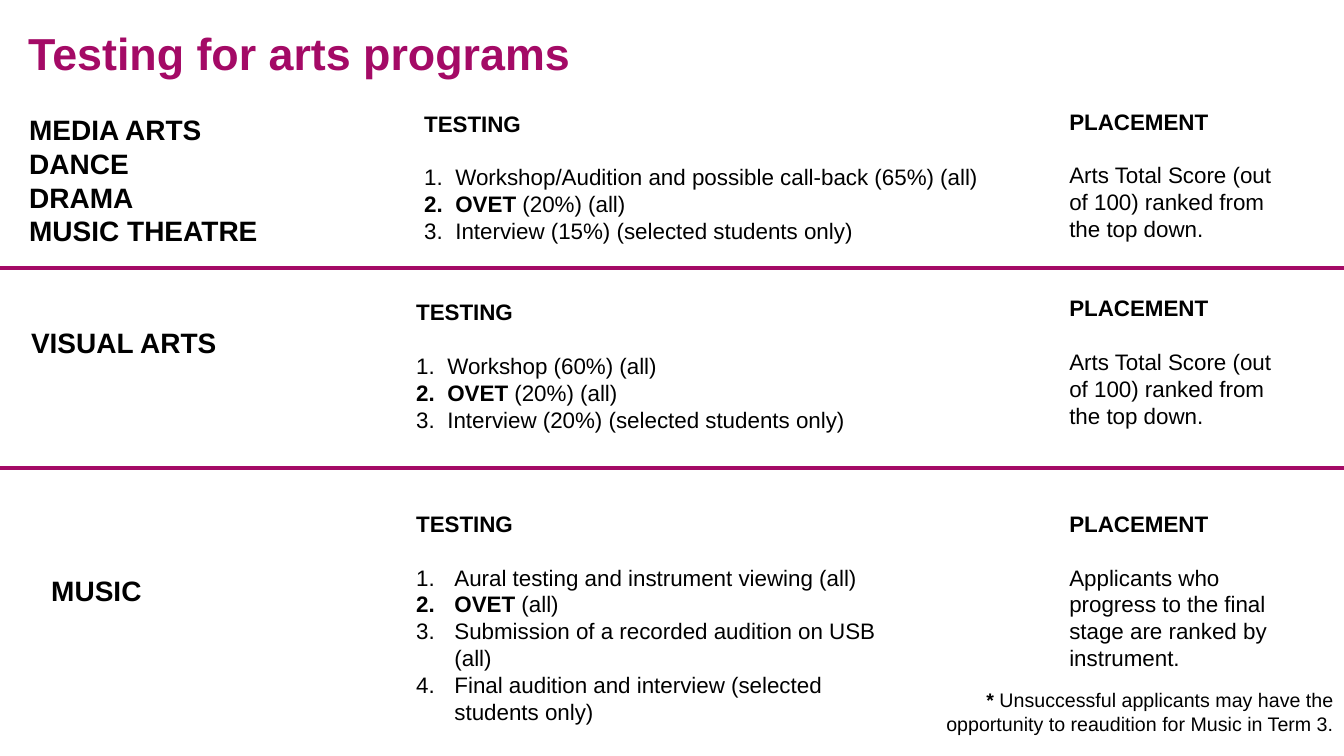
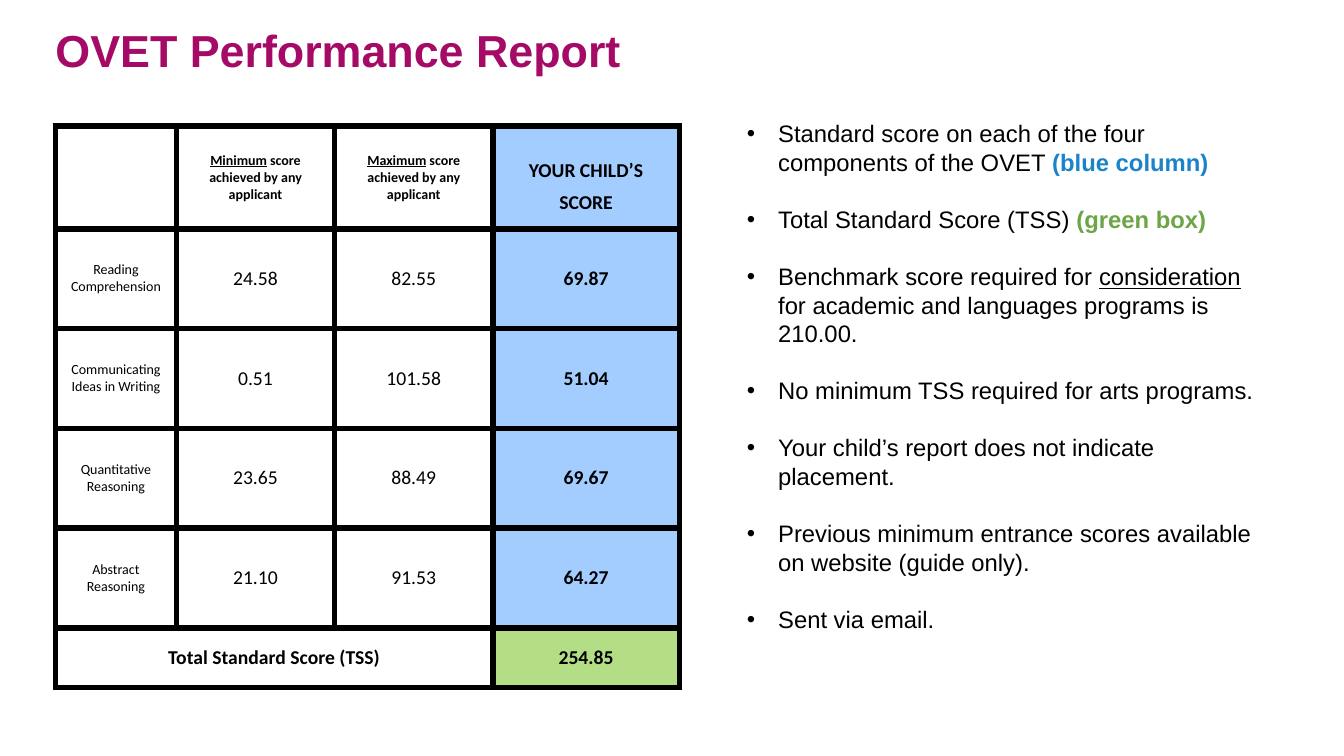
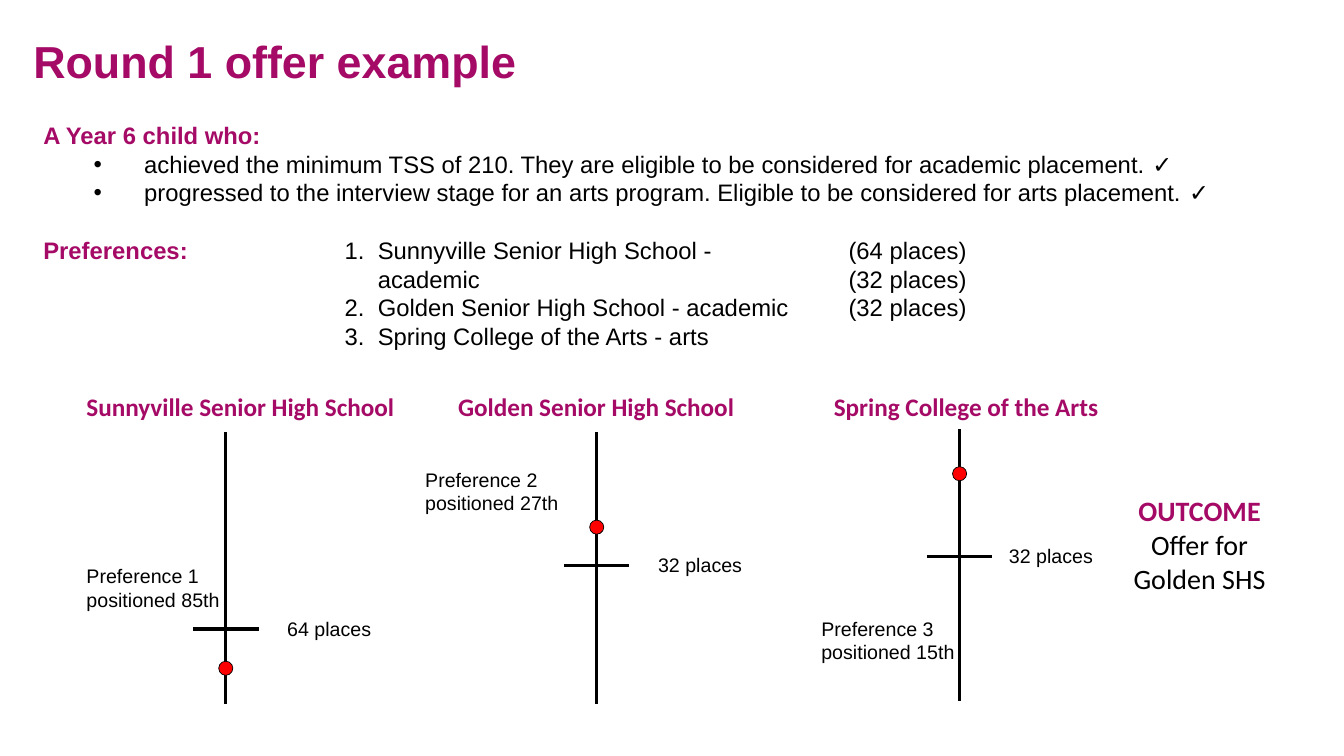
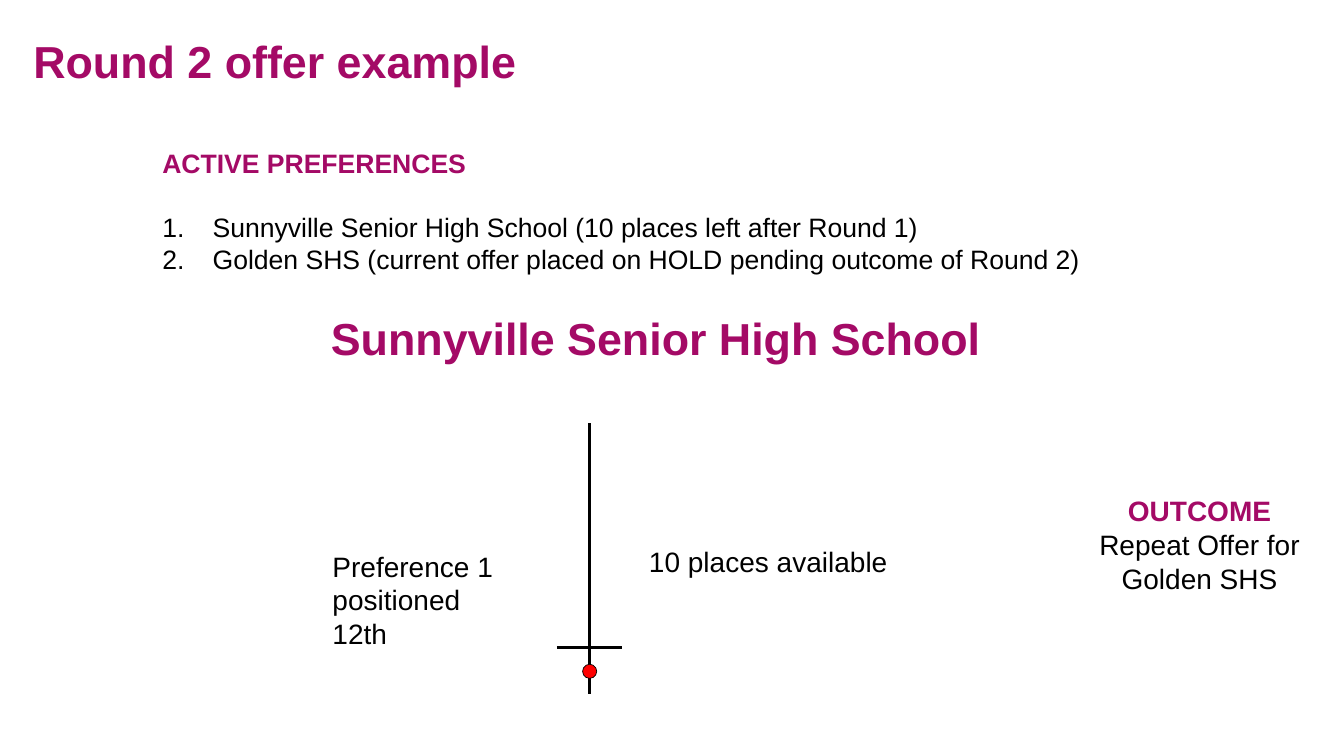
import dataclasses

import lxml.etree
import pptx
import pptx.dml.color
import pptx.enum.shapes
import pptx.enum.text
import pptx.oxml.ns
import pptx.slide
import pptx.table
import pptx.text.text
import pptx.util

CELL = 0.1  # inches in one column or row of the layout grid
SLIDE_COLUMNS, SLIDE_ROWS = 133.33, 75

LEFT = pptx.enum.text.PP_ALIGN.LEFT
CENTER = pptx.enum.text.PP_ALIGN.CENTER
RIGHT = pptx.enum.text.PP_ALIGN.RIGHT
TITLE_ONLY, TITLE_AND_BODY = 5, 1
TEST_NAME = "OVET"


@dataclasses.dataclass(frozen=True)
class Theme:
    accent: str = "A40A66"
    ink: str = "000000"
    marker: str = "FF0000"
    score_fill: str = "A3CDFF"
    total_fill: str = "B4DE86"
    blue_text: str = "1B83C9"
    green_text: str = "6CA644"
    font: str = "Arial"
    alternate_font: str = "Calibri"
    title: float = 32
    large: float = 20
    preference: float = 19
    school: float = 18
    body: float = 17
    detail: float = 16
    small: float = 14
    table_label: float = 10
    line_height: float = 1.2


THEME = Theme()


@dataclasses.dataclass(frozen=True)
class Box:
    """Left, top, width and height in grid cells."""
    left: float
    top: float
    width: float
    height: float

    def lengths(self) -> tuple[int, ...]:
        return tuple(cells(value) for value in dataclasses.astuple(self))


@dataclasses.dataclass(frozen=True)
class Span:
    text: str
    bold: bool | None = None
    underline: bool | None = None
    color: str | None = None


@dataclasses.dataclass(frozen=True)
class Para:
    """One paragraph; margin and hanging are in grid cells, before in points."""
    spans: tuple[str | Span, ...]
    size: float = THEME.detail
    bold: bool = False
    color: str = THEME.ink
    font: str = THEME.font
    align: pptx.enum.text.PP_ALIGN = LEFT
    before: float = 0
    bullet: str = ""
    margin: float = 0
    hanging: float = 0


@dataclasses.dataclass(frozen=True)
class Program:
    names: tuple[str, ...]
    name_box: Box
    testing_box: Box
    tests: tuple[tuple[str | Span, ...], ...]
    hanging: float
    placement_box: Box
    placement: str


@dataclasses.dataclass(frozen=True)
class Ranking:
    """A school's ranking line with its cut-off bar and the child's position."""
    school: str
    school_box: Box
    axis: float
    top: float
    cutoff: float
    position: float
    places: str
    places_box: Box
    preference: tuple[str, str]
    preference_box: Box
    school_size: float = THEME.school
    school_font: str = THEME.alternate_font
    label_size: float = THEME.small


def cells(count: float) -> int:
    return pptx.util.Inches(count * CELL)


def rgb(color: str) -> pptx.dml.color.RGBColor:
    return pptx.dml.color.RGBColor.from_string(color)


def blank_line(size: float) -> float:
    return round(size * THEME.line_height, 1)


def add_element(parent: lxml.etree._Element, tag: str, **attributes: str) -> lxml.etree._Element:
    return lxml.etree.SubElement(parent, pptx.oxml.ns.qn(tag), attributes)


def set_indent(paragraph: pptx.text.text._Paragraph, para: Para) -> None:
    properties = paragraph._p.get_or_add_pPr()
    properties.set("marL", str(cells(para.margin or para.hanging)))
    properties.set("indent", str(-cells(para.hanging)))
    if para.bullet == "number":
        add_element(properties, "a:buAutoNum", type="arabicPeriod")
    elif para.bullet:
        add_element(properties, "a:buChar", char=para.bullet)
    else:
        add_element(properties, "a:buNone")


def write(frame: pptx.text.text.TextFrame, paras: list[Para]) -> None:
    for index, para in enumerate(paras):
        paragraph = frame.add_paragraph() if index else frame.paragraphs[0]
        set_indent(paragraph, para)
        paragraph.alignment = para.align
        paragraph.space_before = pptx.util.Pt(para.before)
        paragraph.font.name = para.font
        paragraph.font.size = pptx.util.Pt(para.size)
        paragraph.font.bold = para.bold
        paragraph.font.color.rgb = rgb(para.color)
        for part in para.spans:
            span = Span(part) if isinstance(part, str) else part
            run = paragraph.add_run()
            run.text = span.text
            if span.bold is not None:
                run.font.bold = span.bold
            if span.underline is not None:
                run.font.underline = span.underline
            if span.color:
                run.font.color.rgb = rgb(span.color)


def place(shape, box: Box) -> None:
    shape.left, shape.top, shape.width, shape.height = box.lengths()


def add_text(slide: pptx.slide.Slide, box: Box, paras: list[Para]) -> None:
    frame = slide.shapes.add_textbox(*box.lengths()).text_frame
    frame.word_wrap = True
    write(frame, paras)


def fill_body(slide: pptx.slide.Slide, box: Box, paras: list[Para]) -> None:
    body = slide.placeholders[1]
    place(body, box)
    body.text_frame.auto_size = pptx.enum.text.MSO_AUTO_SIZE.NONE
    body.text_frame.vertical_anchor = pptx.enum.text.MSO_ANCHOR.TOP
    write(body.text_frame, paras)


def add_slide(deck, layout: int, title: str, left: float, top: float) -> pptx.slide.Slide:
    slide = deck.slides.add_slide(deck.slide_layouts[layout])
    place(slide.shapes.title, Box(left, top, 123.7, 9.6))
    frame = slide.shapes.title.text_frame
    frame.auto_size = pptx.enum.text.MSO_AUTO_SIZE.NONE
    frame.vertical_anchor = pptx.enum.text.MSO_ANCHOR.TOP
    frame.margin_left = frame.margin_top = frame.margin_right = frame.margin_bottom = 0
    write(frame, [Para((title,), THEME.title, True, THEME.accent)])
    frame.paragraphs[0].line_spacing = 0.9
    return slide


def add_line(slide: pptx.slide.Slide, start: tuple[float, float], end: tuple[float, float],
             color: str, width: float) -> None:
    line = slide.shapes.add_connector(
        pptx.enum.shapes.MSO_CONNECTOR.STRAIGHT, *map(cells, start + end))
    line.line.color.rgb = rgb(color)
    line.line.width = pptx.util.Pt(width)
    add_element(line._element.spPr, "a:effectLst")


def add_ranking(slide: pptx.slide.Slide, ranking: Ranking) -> None:
    length, half_bar, dot = 26.9, 3.25, 1.4
    add_text(slide, ranking.school_box, [
        Para((ranking.school,), ranking.school_size, True, THEME.accent,
             ranking.school_font, CENTER)])
    add_line(slide, (ranking.axis, ranking.top), (ranking.axis, ranking.top + length),
             THEME.ink, 2.25)
    add_line(slide, (ranking.axis - half_bar, ranking.cutoff),
             (ranking.axis + half_bar, ranking.cutoff), THEME.ink, 2.25)
    marker = slide.shapes.add_shape(
        pptx.enum.shapes.MSO_SHAPE.OVAL,
        *Box(ranking.axis - dot / 2, ranking.position - dot / 2, dot, dot).lengths())
    marker.shadow.inherit = False
    marker.fill.solid()
    marker.fill.fore_color.rgb = rgb(THEME.marker)
    marker.line.color.rgb = rgb(THEME.ink)
    marker.line.width = pptx.util.Pt(0.5)
    add_text(slide, ranking.places_box, [Para((ranking.places,), ranking.label_size)])
    add_text(slide, ranking.preference_box,
             [Para((line,), ranking.label_size) for line in ranking.preference])


def add_outcome(slide: pptx.slide.Slide, offer: str, font: str) -> None:
    lines = (("OUTCOME", True, THEME.accent), (offer, False, THEME.ink),
             ("Golden SHS", False, THEME.ink))
    add_text(slide, Box(107.4, 48.5, 23.2, 11.1),
             [Para((text,), THEME.large, bold, color, font, CENTER)
              for text, bold, color in lines])


def add_program(slide: pptx.slide.Slide, program: Program) -> None:
    gap = blank_line(THEME.detail)
    add_text(slide, program.name_box,
             [Para((name,), THEME.large, True) for name in program.names])
    add_text(slide, program.testing_box, [Para(("TESTING",), bold=True)] + [
        Para(test, before=0 if index else gap, bullet="number", hanging=program.hanging)
        for index, test in enumerate(program.tests)])
    add_text(slide, program.placement_box, [
        Para(("PLACEMENT",), bold=True), Para((program.placement,), before=gap)])


def build_testing(deck) -> None:
    slide = add_slide(deck, TITLE_ONLY, "Testing for arts programs", 2.8, 3.2)
    test_name = Span(TEST_NAME, bold=True)
    by_score = "Arts Total Score (out of 100) ranked from the top down."
    programs = (
        Program(("MEDIA ARTS", "DANCE", "DRAMA", "MUSIC THEATRE"),
                Box(1.9, 10.7, 28, 14.5), Box(41.1, 10.4, 58.7, 14.5),
                (("Workshop/Audition and possible call-back (65%) (all)",),
                 (test_name, " (20%) (all)"),
                 ("Interview (15%) (selected students only)",)),
                3.1, Box(105.1, 10.2, 22.3, 17.2), by_score),
        Program(("VISUAL ARTS",),
                Box(2.1, 31.8, 28, 4.4), Box(40.3, 29.1, 48.8, 14.5),
                (("Workshop (60%) (all)",),
                 (test_name, " (20%) (all)"),
                 ("Interview (20%) (selected students only)",)),
                3.1, Box(105.1, 28.7, 22.3, 17.2), by_score),
        Program(("MUSIC",),
                Box(4.1, 56.4, 28, 4.4), Box(40.3, 50.1, 48.8, 25.2),
                (("Aural testing and instrument viewing (all)",),
                 (test_name, " (all)"),
                 ("Submission of a recorded audition on USB (all)",),
                 ("Final audition and interview (selected students only)",)),
                3.8, Box(105.1, 50.1, 22.3, 19.9),
                "Applicants who progress to the final stage are ranked by instrument."),
    )
    for program in programs:
        add_program(slide, program)
    for row in (26.6, 46.4):
        add_line(slide, (0, row), (SLIDE_COLUMNS, row), THEME.accent, 3)
    add_text(slide, Box(92.5, 67.8, 40.8, 5.7), [
        Para((Span("*", bold=True), " Unsuccessful applicants may have the opportunity"
              " to reaudition for Music in Term 3."), THEME.small, align=RIGHT)])


def set_borders(cell: pptx.table._Cell) -> None:
    properties = cell._tc.get_or_add_tcPr()
    for index, side in enumerate(("a:lnL", "a:lnR", "a:lnT", "a:lnB")):
        border = add_element(properties, side, w=str(pptx.util.Pt(4.5)))
        fill = add_element(border, "a:solidFill")
        add_element(fill, "a:srgbClr", val=THEME.ink)
        properties.insert(index, border)


def fill_cell(cell: pptx.table._Cell, paras: list[Para], fill: str = "") -> None:
    cell.margin_left = cell.margin_right = cells(0.7)
    cell.margin_top = cell.margin_bottom = 0
    cell.vertical_anchor = pptx.enum.text.MSO_ANCHOR.MIDDLE
    if fill:
        cell.fill.solid()
        cell.fill.fore_color.rgb = rgb(fill)
    else:
        cell.fill.background()
    write(cell.text_frame, paras)
    set_borders(cell)


def table_para(*spans: str | Span, size: float = THEME.small, bold: bool = False,
               before: float = 0) -> Para:
    return Para(spans, size, bold, font=THEME.alternate_font, align=CENTER, before=before)


def add_score_table(slide: pptx.slide.Slide) -> None:
    scores = (
        ("Reading Comprehension", "24.58", "82.55", "69.87"),
        ("Communicating Ideas in Writing", "0.51", "101.58", "51.04"),
        ("Quantitative Reasoning", "23.65", "88.49", "69.67"),
        ("Abstract Reasoning", "21.10", "91.53", "64.27"),
    )
    widths = (12, 15.7, 15.7, 18.5)
    heights = (10.2, *[9.9] * len(scores), 5.9)
    table = slide.shapes.add_table(
        len(heights), len(widths),
        *Box(5.5, 12.5, sum(widths), sum(heights)).lengths()).table
    table.first_row = table.horz_banding = False
    for column, width in zip(table.columns, widths):
        column.width = cells(width)
    for row, height in zip(table.rows, heights):
        row.height = cells(height)

    fill_cell(table.cell(0, 0), [])
    for column, extreme in enumerate(("Minimum", "Maximum"), 1):
        fill_cell(table.cell(0, column), [
            table_para(Span(extreme, underline=True), " score achieved by any applicant",
                       size=THEME.table_label, bold=True)])
    fill_cell(table.cell(0, 3), [table_para("YOUR CHILD’S", bold=True),
                                 table_para("SCORE", bold=True, before=6)],
              THEME.score_fill)
    table.cell(0, 3).margin_top = cells(1.8)

    for row, (component, minimum, maximum, score) in enumerate(scores, 1):
        fill_cell(table.cell(row, 0), [table_para(component, size=THEME.table_label)])
        fill_cell(table.cell(row, 1), [table_para(minimum)])
        fill_cell(table.cell(row, 2), [table_para(maximum)])
        fill_cell(table.cell(row, 3), [table_para(score, bold=True)], THEME.score_fill)

    total = len(heights) - 1
    table.cell(total, 0).merge(table.cell(total, 2))
    fill_cell(table.cell(total, 0), [table_para("Total Standard Score (TSS)", bold=True)])
    for column in (1, 2):
        set_borders(table.cell(total, column))
    fill_cell(table.cell(total, 3), [table_para("254.85", bold=True)], THEME.total_fill)


def build_report(deck) -> None:
    slide = add_slide(deck, TITLE_AND_BODY, f"{TEST_NAME} Performance Report", 5.5, 2.9)
    points = (
        (f"Standard score on each of the four components of the {TEST_NAME} ",
         Span("(blue column)", bold=True, color=THEME.blue_text)),
        ("Total Standard Score (TSS) ",
         Span("(green box)", bold=True, color=THEME.green_text)),
        ("Benchmark score required for ", Span("consideration", underline=True),
         " for academic and languages programs is 210.00."),
        ("No minimum TSS required for arts programs.",),
        ("Your child’s report does not indicate placement.",),
        ("Previous minimum entrance scores available on website (guide only).",),
        ("Sent via email.",),
    )
    fill_body(slide, Box(73.1, 11.3, 53.5, 52.5), [
        Para(point, THEME.body, before=blank_line(THEME.body) if index else 0,
             bullet="•", hanging=3.1)
        for index, point in enumerate(points)])
    add_score_table(slide)


def build_first_round(deck) -> None:
    slide = add_slide(deck, TITLE_AND_BODY, "Round 1 offer example", 3.3, 3.9)
    facts = (
        "achieved the minimum TSS of 210. They are eligible to be considered"
        " for academic placement. ✓",
        "progressed to the interview stage for an arts program."
        " Eligible to be considered for arts placement. ✓",
    )
    preferences = (
        ("Sunnyville Senior High School - academic", 64),
        ("Golden Senior High School - academic", 32),
        ("Spring College of the Arts - arts", 32),
    )
    fill_body(slide, Box(3.3, 11.5, 127.4, 15.5), [
        Para(("A Year 6 child who:",), THEME.body, True, THEME.accent),
        *[Para((fact,), THEME.body, bullet="•", margin=10, hanging=5) for fact in facts],
        Para(("Preferences:",), THEME.body, True, THEME.accent,
             before=blank_line(THEME.body))])
    list_top, list_height = 22.9, 9.6
    add_text(slide, Box(33.2, list_top, 49, list_height), [
        Para((choice,), THEME.body, bullet="number", hanging=3.3)
        for choice, _ in preferences])
    add_text(slide, Box(83.2, list_top, 20, list_height), [
        Para((f"({places} places)",), THEME.body) for _, places in preferences])

    rankings = (
        Ranking("Sunnyville Senior High School", Box(7.4, 38.3, 32.9, 4),
                22.4, 42.9, 62.4, 66.3, "64 places", Box(27.5, 60.7, 14.1, 3.4),
                ("Preference 1", "positioned 85th"), Box(7.6, 55.5, 18, 5.7)),
        Ranking("Golden Senior High School", Box(44.3, 38.3, 29.7, 4),
                59.2, 42.9, 56.1, 52.3, "32 places", Box(64.3, 54.4, 14.1, 3.4),
                ("Preference 2", "positioned 27th"), Box(41.2, 45.9, 18, 5.7)),
        Ranking("Spring College of the Arts", Box(81.7, 38.3, 28.3, 4),
                95.2, 42.6, 55.2, 47, "32 places", Box(99.1, 53.5, 14.1, 3.4),
                ("Preference 3", "positioned 15th"), Box(80.5, 60.7, 18, 5.7)),
    )
    for ranking in rankings:
        add_ranking(slide, ranking)
    add_outcome(slide, "Offer for", THEME.alternate_font)


def build_second_round(deck) -> None:
    slide = add_slide(deck, TITLE_AND_BODY, "Round 2 offer example", 3.3, 3.9)
    active = (
        "Sunnyville Senior High School (10 places left after Round 1)",
        "Golden SHS (current offer placed on HOLD pending outcome of Round 2)",
    )
    size = THEME.preference
    fill_body(slide, Box(15.1, 14.1, 115.6, 14.5), [
        Para(("ACTIVE PREFERENCES",), size, True, THEME.accent)] + [
        Para((choice,), size, before=0 if index else blank_line(size),
             bullet="number", hanging=5)
        for index, choice in enumerate(active)])
    add_ranking(slide, Ranking(
        "Sunnyville Senior High School", Box(31.1, 30.3, 68, 6.4),
        58.5, 42, 64.2, 66.6, "10 places available", Box(63.4, 53.5, 29.6, 4.4),
        ("Preference 1", "positioned 12th"), Box(32, 54, 18, 11.1),
        THEME.title, THEME.font, THEME.large))
    add_outcome(slide, "Repeat Offer for", THEME.font)


def main() -> None:
    deck = pptx.Presentation()
    deck.slide_width, deck.slide_height = cells(SLIDE_COLUMNS), cells(SLIDE_ROWS)
    for build in (build_testing, build_report, build_first_round, build_second_round):
        build(deck)
    deck.save("out.pptx")


if __name__ == "__main__":
    main()
